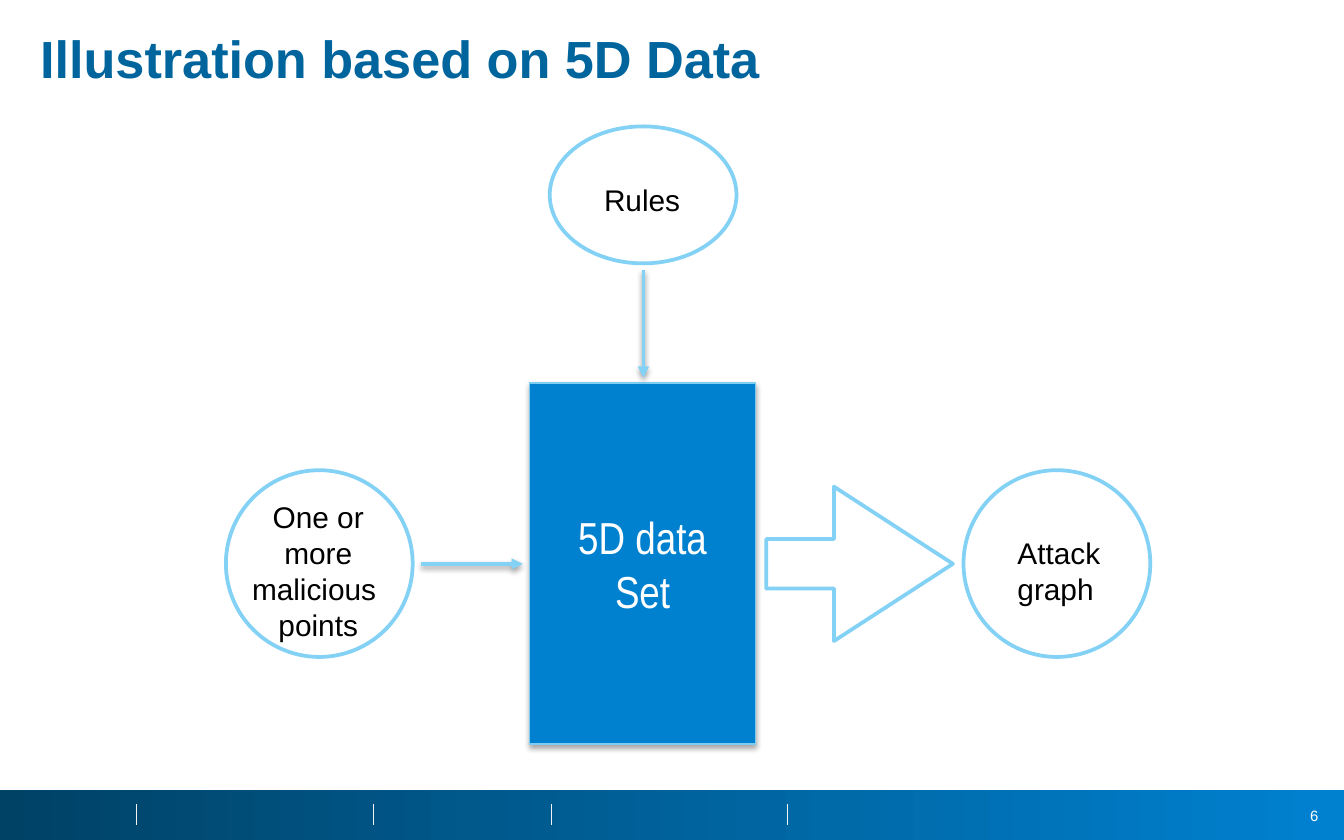
from dataclasses import dataclass
from typing import Any

from lxml import etree
from pptx import Presentation
from pptx.dml.color import RGBColor
from pptx.enum import shapes, text
from pptx.oxml.ns import qn
from pptx.util import Cm, Pt

SHAPE, ALIGN, ANCHOR = shapes.MSO_SHAPE, text.PP_ALIGN, text.MSO_ANCHOR


def rgb(code):
    return RGBColor.from_string(code)


def set_effect(sp, opacity=None, distance=1.8):
    """Replace the theme shadow by a soft one below, or by none."""
    effects = etree.SubElement(sp._element.spPr, qn("a:effectLst"))
    if opacity:
        shadow = etree.SubElement(effects, qn("a:outerShdw"), blurRad=str(Pt(3)),
                                  dist=str(Pt(distance)), dir="5400000",
                                  algn="ctr", rotWithShape="0")
        color = etree.SubElement(shadow, qn("a:srgbClr"), val="000000")
        etree.SubElement(color, qn("a:alpha"), val=str(opacity * 1000))


@dataclass
class Diagram:
    s: Any
    font: str = "Arial"
    title: str = "00649D"
    dark: str = "004266"
    blue: str = "0081D0"
    sky: str = "83D1F5"
    edge: str = "7DCDF2"
    tick: str = "F2F2F2"
    white: str = "FFFFFF"
    black: str = "000000"

    def text(self, content, x, y, w, h, size=16, color=None, bold=False, font=None,
             align=ALIGN.CENTER, anchor=ANCHOR.TOP, inset=0.13, spacing=None):
        tf = self.s.shapes.add_textbox(Cm(x), Cm(y), Cm(w), Cm(h)).text_frame
        tf.word_wrap = True
        tf.vertical_anchor = anchor
        tf.margin_left = tf.margin_right = Cm(inset)
        tf.margin_top = tf.margin_bottom = Cm(0.13)
        tf.text = content
        for p in tf.paragraphs:
            p.alignment = align
            p.line_spacing = spacing
            p.font.size = Pt(size)
            p.font.name = font or self.font
            p.font.bold = bold
            p.font.color.rgb = rgb(color or self.black)

    def shape(self, kind, x, y, w, h, fill=None, line=None, width=2, shadow=None):
        sp = self.s.shapes.add_shape(kind, Cm(x), Cm(y), Cm(w), Cm(h))
        sp.fill.solid()
        sp.fill.fore_color.rgb = rgb(fill or self.white)
        sp.line.color.rgb = rgb(line or self.sky)
        sp.line.width = Pt(width)
        set_effect(sp, shadow)
        return sp

    def bar(self, x, y, w, h):
        sp = self.s.shapes.add_shape(SHAPE.RECTANGLE, Cm(x), Cm(y), Cm(w), Cm(h))
        sp.fill.gradient()
        sp.fill.gradient_angle = 0
        for stop, color in zip(sp.fill.gradient_stops, (self.dark, self.blue)):
            stop.color.rgb = rgb(color)
        sp.line.fill.background()
        set_effect(sp)

    def line(self, x1, y1, x2, y2, color, width):
        sp = self.s.shapes.add_connector(shapes.MSO_CONNECTOR.STRAIGHT,
                                         Cm(x1), Cm(y1), Cm(x2), Cm(y2))
        sp.line.color.rgb = rgb(color)
        sp.line.width = Pt(width)
        return sp

    def divider(self, x, y1, y2):
        set_effect(self.line(x, y1, x, y2, self.tick, 0.25))

    def arrow(self, x1, y1, x2, y2):
        sp = self.line(x1, y1, x2, y2, self.sky, 2)
        etree.SubElement(sp.line._get_or_add_ln(), qn("a:tailEnd"), type="triangle")
        set_effect(sp, 38, 1.6)


def main():
    prs = Presentation()
    prs.slide_width, prs.slide_height = Cm(25.4), Cm(15.88)
    d = Diagram(prs.slides.add_slide(prs.slide_layouts[6]))

    d.bar(0, 14.93, 25.4, 0.95)
    d.text("6", 24.1, 15.11, 1.07, 0.61, size=8, color=d.white,
           align=ALIGN.RIGHT, anchor=ANCHOR.MIDDLE, inset=0.25)
    for x in (2.57, 7.06, 10.41, 14.88):
        d.divider(x, 15.19, 15.6)

    d.text("Illustration based on 5D Data", 0.51, 0.51, 24.36, 1.35, size=28,
           color=d.title, bold=True, align=ALIGN.LEFT, inset=0.25, spacing=0.9)

    d.shape(SHAPE.RECTANGLE, 10.01, 7.24, 4.27, 6.83, d.blue, d.edge, 0.75, shadow=35)
    d.text("5D data\nSet", 10.01, 9.58, 4.27, 2.16, size=24, color=d.white,
           font="Arial Narrow", anchor=ANCHOR.MIDDLE)

    size = 3.53
    for x, y, h in ((4.27, 8.89, size), (10.39, 2.39, 2.59), (18.21, 8.89, size)):
        d.shape(SHAPE.OVAL, x, y, size, h)
    d.text("One or more\nmalicious \npoints", 4.62, 9.3, 2.79, 3)
    d.text("Rules", 10.74, 3.3, 2.79, 0.94)
    d.text("Attack graph", 19.1, 9.98, 2.79, 1.63, align=ALIGN.LEFT)

    d.arrow(12.16, 5.11, 12.16, 7.14)
    d.arrow(7.95, 10.66, 9.88, 10.66)
    output = d.shape(SHAPE.RIGHT_ARROW, 14.48, 9.2, size, 2.92)
    output.adjustments[0], output.adjustments[1] = 0.32, 0.77

    prs.save("out.pptx")


if __name__ == "__main__":
    main()
